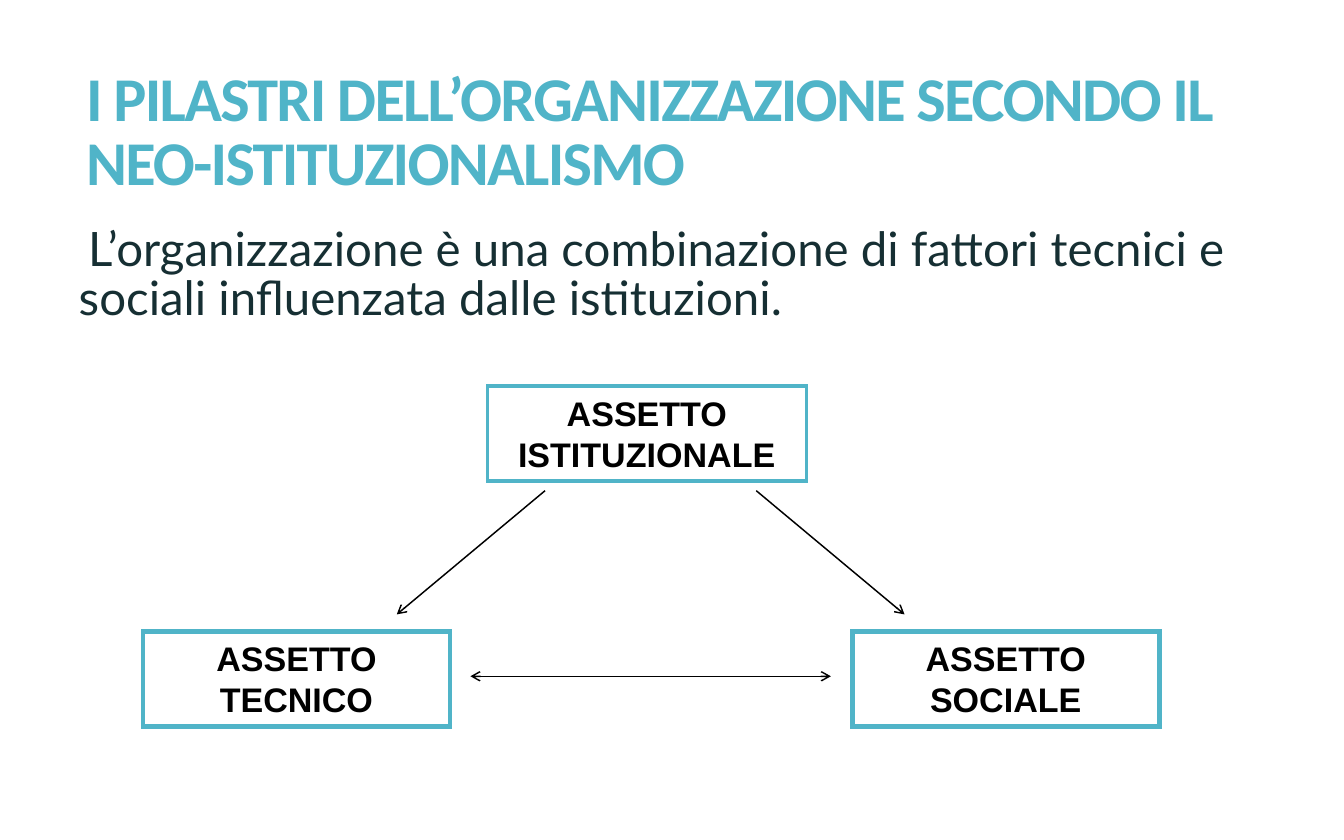
from dataclasses import dataclass

from lxml import etree
from pptx import Presentation
from pptx.dml.color import RGBColor
from pptx.enum.shapes import MSO_CONNECTOR, MSO_SHAPE
from pptx.enum.text import MSO_ANCHOR, PP_ALIGN
from pptx.oxml.ns import qn
from pptx.util import Inches, Pt

RECTANGLE = MSO_SHAPE.RECTANGLE
STRAIGHT = MSO_CONNECTOR.STRAIGHT
CENTER = PP_ALIGN.CENTER
TOP, MIDDLE = MSO_ANCHOR.TOP, MSO_ANCHOR.MIDDLE

TEAL = RGBColor(0x50, 0xB4, 0xC8)
DARK = RGBColor(0x16, 0x2F, 0x33)
BLACK = RGBColor(0, 0, 0)

PAGE_WIDTH = 12.6
PAGE_RATIO = 16 / 10
HEADING_WIDTH = 11.34
HANGING_INDENT = 0.09
PILLAR_HEIGHT = 0.89


@dataclass
class Heading:
    text: str
    left: float
    top: float
    height: float
    font: str
    size: int
    color: RGBColor
    bold: bool
    anchor: MSO_ANCHOR


@dataclass
class Pillar:
    text: str
    left: float
    top: float
    width: float
    border: float


@dataclass
class Arrow:
    start: tuple[float, float]
    end: tuple[float, float]
    ends: tuple[str, ...] = ("tailEnd",)


TITLE = Heading("I PILASTRI DELL’ORGANIZZAZIONE SECONDO IL NEO-ISTITUZIONALISMO",
                0.71, 0.47, 1.58, "Calibri", 42, TEAL, True, MIDDLE)
BODY = Heading("L’organizzazione è una combinazione di fattori tecnici e "
               "sociali influenzata dalle istituzioni.",
               0.55, 2.09, 1.77, "Lato", 32, DARK, False, TOP)
PILLARS = [
    Pillar("ASSETTO ISTITUZIONALE", 4.57, 3.62, 2.99, 2.25),
    Pillar("ASSETTO TECNICO", 1.34, 5.92, 2.88, 3),
    Pillar("ASSETTO SOCIALE", 7.99, 5.92, 2.88, 3),
]
ARROWS = [
    Arrow((5.11, 4.6), (3.72, 5.76)),
    Arrow((7.09, 4.6), (8.48, 5.76)),
    Arrow((4.41, 6.34), (7.79, 6.34), ("headEnd", "tailEnd")),
]


def add_heading(page, heading: Heading):
    box = page.shapes.add_textbox(Inches(heading.left), Inches(heading.top),
                                  Inches(HEADING_WIDTH), Inches(heading.height))
    frame = box.text_frame
    frame.word_wrap = True
    frame.vertical_anchor = heading.anchor
    para = frame.paragraphs[0]
    para.text = heading.text
    para.line_spacing = 0.85
    para.font.name = heading.font
    para.font.size = Pt(heading.size)
    para.font.bold = heading.bold
    para.font.color.rgb = heading.color
    return para


def add_title(page) -> None:
    para = add_heading(page, TITLE)
    para.runs[0].font._element.set("spc", "-115")


def add_body(page) -> None:
    para = add_heading(page, BODY)
    para.space_before = Pt(12.3)
    properties = para._p.get_or_add_pPr()
    properties.set("marL", str(Inches(HANGING_INDENT)))
    properties.set("indent", str(-Inches(HANGING_INDENT)))
    bullet_size = etree.Element(qn("a:buSzPct"), val="80000")
    bullet = etree.Element(qn("a:buChar"), char=" ")
    properties.find(qn("a:spcBef")).addnext(bullet_size)
    bullet_size.addnext(bullet)


def add_pillar(page, pillar: Pillar) -> None:
    box = page.shapes.add_shape(RECTANGLE, Inches(pillar.left), Inches(pillar.top),
                                Inches(pillar.width), Inches(PILLAR_HEIGHT))
    box.shadow.inherit = False
    box.fill.background()
    box.line.color.rgb = TEAL
    box.line.width = Pt(pillar.border)
    etree.SubElement(box.line._get_or_add_ln(), qn("a:miter"), lim="800000")
    frame = box.text_frame
    frame.word_wrap = True
    frame.vertical_anchor = TOP
    frame.margin_left = frame.margin_right = Inches(0.12)
    frame.margin_top = frame.margin_bottom = Inches(0.06)
    para = frame.paragraphs[0]
    para.text = pillar.text
    para.alignment = CENTER
    para.font.name = "Arial"
    para.font.size = Pt(23)
    para.font.bold = True
    para.font.color.rgb = BLACK


def add_arrow(page, arrow: Arrow) -> None:
    points = [Inches(value) for value in arrow.start + arrow.end]
    connector = page.shapes.add_connector(STRAIGHT, *points)
    connector.line.color.rgb = BLACK
    connector.line.width = Pt(1)
    line = connector.line._get_or_add_ln()
    for end in arrow.ends:
        etree.SubElement(line, qn(f"a:{end}"), type="arrow")
    etree.SubElement(connector._element.spPr, qn("a:effectLst"))


def main() -> None:
    deck = Presentation()
    deck.slide_width = Inches(PAGE_WIDTH)
    deck.slide_height = Inches(PAGE_WIDTH / PAGE_RATIO)
    page = deck.slides.add_slide(deck.slide_layouts[6])
    add_title(page)
    add_body(page)
    for pillar in PILLARS:
        add_pillar(page, pillar)
    for arrow in ARROWS:
        add_arrow(page, arrow)
    deck.save("out.pptx")


if __name__ == "__main__":
    main()
